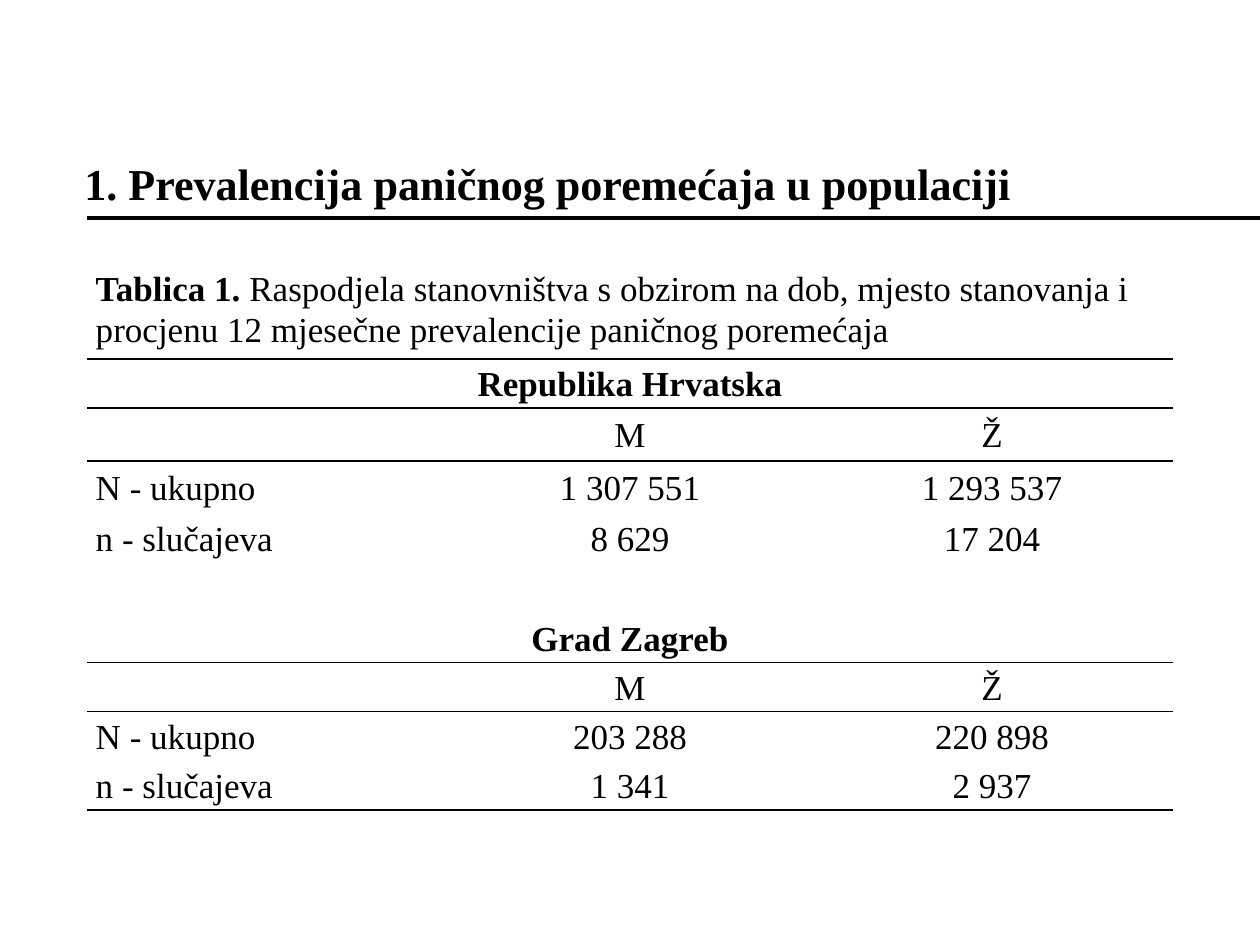
from lxml.etree import SubElement
from pptx import Presentation
from pptx.dml.color import RGBColor
from pptx.enum.shapes import MSO_CONNECTOR
from pptx.enum.text import MSO_ANCHOR, MSO_AUTO_SIZE, PP_ALIGN
from pptx.oxml import parse_xml
from pptx.oxml.ns import nsdecls, qn
from pptx.util import Inches, Pt

BLACK = RGBColor(0, 0, 0)
FONT = "Times New Roman"
TITLE = "1. Prevalencija paničnog poremećaja u populaciji"
CAPTION = [
    ("Tablica 1. ", True),
    ("Raspodjela stanovništva s obzirom na dob, mjesto stanovanja i "
     "procjenu 12 mjesečne prevalencije paničnog poremećaja", False),
]
ROWS = [
    (0.8, [CAPTION]),
    (0.39, ["Republika Hrvatska"]),
    (0.42, ["", "M", "Ž"]),
    (0.42, ["N - ukupno", "1 307 551", "1 293 537"]),
    (0.39, ["n - slučajeva", "8 629", "17 204"]),
    (0.4, ["", "", ""]),
    (0.39, ["Grad Zagreb"]),
    (0.39, ["", "M", "Ž"]),
    (0.39, ["N - ukupno", "203 288", "220 898"]),
    (0.39, ["n - slučajeva", "1 341", "2 937"]),
]
RULED_BELOW = {0, 1, 2, 6, 7, 9}
LEFT, TOP, WIDTH, COLS = 0.69, 2.05, 8.62, 3


def style_font(font, size, bold=False):
    font.name, font.size, font.bold = FONT, Pt(size), bold
    font.color.rgb = BLACK


def set_borders(cell, ruled_sides):
    tc_pr = cell._tc.get_or_add_tcPr()
    for i, side in enumerate("LRTB"):
        if side in ruled_sides:
            xml = (f'<a:ln{side} {nsdecls("a")} w="{Pt(1)}"><a:solidFill>'
                   f'<a:srgbClr val="{BLACK}"/></a:solidFill></a:ln{side}>')
        else:
            xml = f'<a:ln{side} {nsdecls("a")} w="0"><a:noFill/></a:ln{side}>'
        tc_pr.insert(i, parse_xml(xml))


def fill_cell(cell, text, align, bold):
    p = cell.text_frame.paragraphs[0]
    p.alignment, p.line_spacing = align, 1.07
    style_font(p.font, 20, bold)
    runs = text if isinstance(text, list) else [(text, bold)]
    for words, heavy in runs:
        if words:
            r = p.add_run()
            r.text = words
            r.font.bold = heavy


def add_title(slide):
    sp = slide.shapes.title
    sp.left, sp.top = Inches(0.57), Inches(1.22)
    sp.width, sp.height = Inches(8.74), Inches(0.51)
    tf = sp.text_frame
    tf.text = TITLE
    tf.word_wrap = True
    tf.auto_size = MSO_AUTO_SIZE.NONE
    tf.vertical_anchor = MSO_ANCHOR.MIDDLE
    p = tf.paragraphs[0]
    p.alignment, p.line_spacing = PP_ALIGN.LEFT, 0.9
    style_font(p.font, 25.2, True)


def add_underline(slide):
    line = slide.shapes.add_connector(
        MSO_CONNECTOR.STRAIGHT, Inches(10), Inches(1.73), Inches(LEFT), Inches(1.73))
    line.line.color.rgb = BLACK
    line.line.width = Pt(2)
    SubElement(line._element.spPr, qn("a:effectLst"))


def add_prevalence_table(slide):
    height = sum(h for h, _ in ROWS)
    table = slide.shapes.add_table(
        len(ROWS), COLS, Inches(LEFT), Inches(TOP), Inches(WIDTH), Inches(height)).table
    table.first_row = table.horz_banding = False
    for i, (h, texts) in enumerate(ROWS):
        table.rows[i].height = Inches(h)
        sides = ("T" if i - 1 in RULED_BELOW else "") + ("B" if i in RULED_BELOW else "")
        for j in range(COLS):
            cell = table.cell(i, j)
            cell.margin_left = cell.margin_right = Inches(0.07)
            cell.margin_top = cell.margin_bottom = 0
            cell.vertical_anchor = MSO_ANCHOR.MIDDLE
            cell.fill.background()
            set_borders(cell, sides)
        spanning = len(texts) == 1
        if spanning:
            table.cell(i, 0).merge(table.cell(i, COLS - 1))
        for j, text in enumerate(texts):
            heading = spanning and text is not CAPTION
            align = PP_ALIGN.CENTER if heading or j else PP_ALIGN.LEFT
            fill_cell(table.cell(i, j), text, align, heading)


def main():
    prs = Presentation()
    prs.slide_width, prs.slide_height = Inches(10), Inches(7.5)
    slide = prs.slides.add_slide(prs.slide_layouts[5])
    add_title(slide)
    add_underline(slide)
    add_prevalence_table(slide)
    prs.save("out.pptx")


if __name__ == "__main__":
    main()
